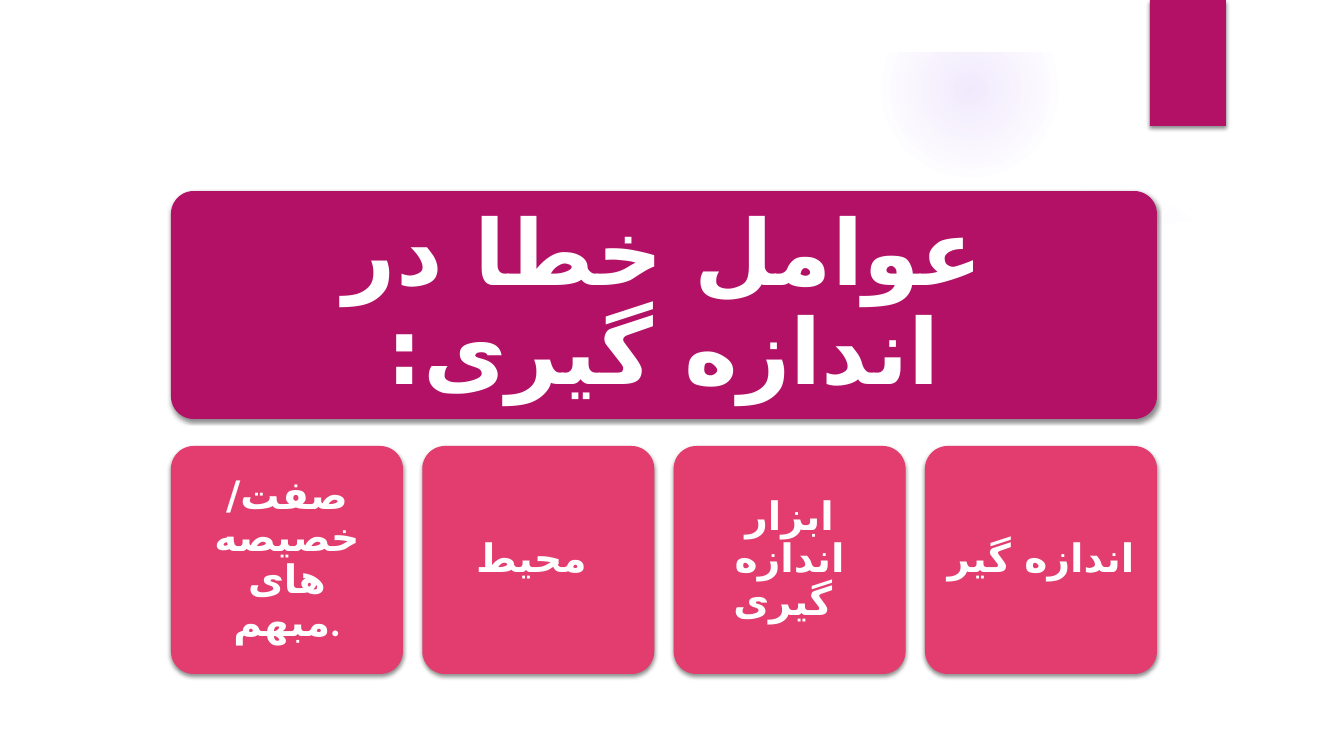
"""Build the slide on the causes of measurement error."""
from lxml import etree
from pptx import Presentation, util as u
from pptx.dml.color import RGBColor
from pptx.enum import shapes, text
from pptx.oxml import parse_xml
from pptx.oxml.ns import nsdecls, qn

EMU_PER_PX = 914400 / 100.8
MAGENTA, PINK, WHITE, VIOLET = "B31166", "E33D6F", "FFFFFF", "9B6BF2"
FONT, ARABIC_FONT = "Calibri", "DejaVu Sans"
TITLE = "عوامل خطا در اندازه گیری:"
CAUSES = ["صفت/ خصیصه های مبهم.", "محیط ", "ابزار اندازه گیری ", "اندازه گیر"]
LEFT, WIDTH, CARD_WIDTH, HEIGHT = 171, 986, 232, 228
BANNER_TOP, CARD_TOP = 191, 446
GLOWS = [((949, 184, 310, 310), [(0, 7), (36, 6), (69, 0)]),
         ((882, 1, 176, 176), [(0, 14), (36, 7), (73, 0)])]
PANEL = [(50, 206), (50, 706), (1294, 706), (1294, 206), (1238, 215), (1181, 222),
         (1125, 229), (1068, 234), (1012, 239), (957, 243), (874, 247), (766, 249),
         (662, 250), (539, 248), (447, 243), (323, 235), (218, 226), (114, 214)]
FRAME = [[(0, 0), (0, 756), (1344, 756), (1344, 0)],
         [(1291, 704), (52, 704), (52, 52), (1291, 52)]]


def px(value):
    return u.Emu(round(value * EMU_PER_PX))


def color(value):
    return RGBColor.from_string(value)


def set_values(target, values):
    for name, value in values.items():
        setattr(target, name, value)


def paint(shape, fill):
    shape.shadow.inherit = False
    shape.fill.solid()
    shape.fill.fore_color.rgb = color(fill)
    shape.line.fill.background()
    return shape


def add_block(slide, kind, box, fill):
    return paint(slide.shapes.add_shape(kind, *map(px, box)), fill)


def add_outline(slide, contours, fill):
    builder = slide.shapes.build_freeform(*contours[0][0], scale=EMU_PER_PX)
    builder.add_line_segments(contours[0][1:])
    for contour in contours[1:]:
        builder.move_to(*contour[0])
        builder.add_line_segments(contour[1:])
    return paint(builder.convert_to_shape(), fill)


def add_shadow(shape):
    effects = shape._element.spPr.find(qn("a:effectLst"))
    effects.append(parse_xml(
        f'<a:outerShdw {nsdecls("a")} blurRad="{u.Pt(3)}" dist="{u.Pt(2)}" dir="5400000" '
        'rotWithShape="0"><a:srgbClr val="000000"><a:alpha val="45000"/></a:srgbClr></a:outerShdw>'))


def add_glow(slide, box, glow_stops):
    shape = add_block(slide, shapes.MSO_SHAPE.OVAL, box, VIOLET)
    stops = "".join(
        f'<a:gs pos="{position * 1000}"><a:srgbClr val="{VIOLET}">'
        f'<a:alpha val="{alpha * 1000}"/></a:srgbClr></a:gs>' for position, alpha in glow_stops)
    gradient = parse_xml(
        f'<a:gradFill {nsdecls("a")}><a:gsLst>{stops}</a:gsLst><a:path path="circle">'
        '<a:fillToRect l="50000" t="50000" r="50000" b="50000"/></a:path></a:gradFill>')
    properties = shape._element.spPr
    properties.replace(properties.find(qn("a:solidFill")), gradient)


def add_card(slide, box, fill):
    shape = add_block(slide, shapes.MSO_SHAPE.ROUNDED_RECTANGLE, box, fill)
    shape.adjustments[0] = 0.1
    add_shadow(shape)
    return shape


def write_text(shape, words, size, inset):
    frame = shape.text_frame
    set_values(frame, {"word_wrap": True, "auto_size": text.MSO_AUTO_SIZE.NONE,
                       "vertical_anchor": text.MSO_ANCHOR.MIDDLE})
    set_values(frame, dict.fromkeys(
        ("margin_left", "margin_top", "margin_right", "margin_bottom"), px(inset)))
    paragraph = frame.paragraphs[0]
    set_values(paragraph, {"alignment": text.PP_ALIGN.CENTER, "line_spacing": 0.9})
    run = paragraph.add_run()
    run.text = words
    set_values(run.font, {"name": FONT, "size": u.Pt(size), "bold": True})
    run.font.color.rgb = color(WHITE)
    etree.SubElement(run.font._element, qn("a:cs"), typeface=ARABIC_FONT)
    return paragraph


def place_title(slide):
    title = slide.shapes.title
    set_values(title, {"left": px(177), "top": px(198), "width": px(973), "height": px(215)})
    paragraph = write_text(title, TITLE, 65, 27)
    paragraph._p.get_or_add_pPr().set("rtl", "1")
    slide.shapes._spTree.append(title._element)


def main():
    presentation = Presentation()
    set_values(presentation, {"slide_width": px(1344), "slide_height": px(756)})
    slide = presentation.slides.add_slide(presentation.slide_layouts[5])
    for box, glow_stops in GLOWS:
        add_glow(slide, box, glow_stops)
    add_outline(slide, [PANEL], WHITE)
    add_outline(slide, FRAME, WHITE)
    add_shadow(add_block(slide, shapes.MSO_SHAPE.RECTANGLE, (1150, 0, 76, 126), MAGENTA))
    add_card(slide, (LEFT, BANNER_TOP, WIDTH, HEIGHT), MAGENTA)
    place_title(slide)
    step = (WIDTH - CARD_WIDTH) / (len(CAUSES) - 1)
    for index, cause in enumerate(CAUSES):
        card = add_card(slide, (LEFT + index * step, CARD_TOP, CARD_WIDTH, HEIGHT), PINK)
        write_text(card, cause, 28, 12)
    presentation.save("out.pptx")


if __name__ == "__main__":
    main()
